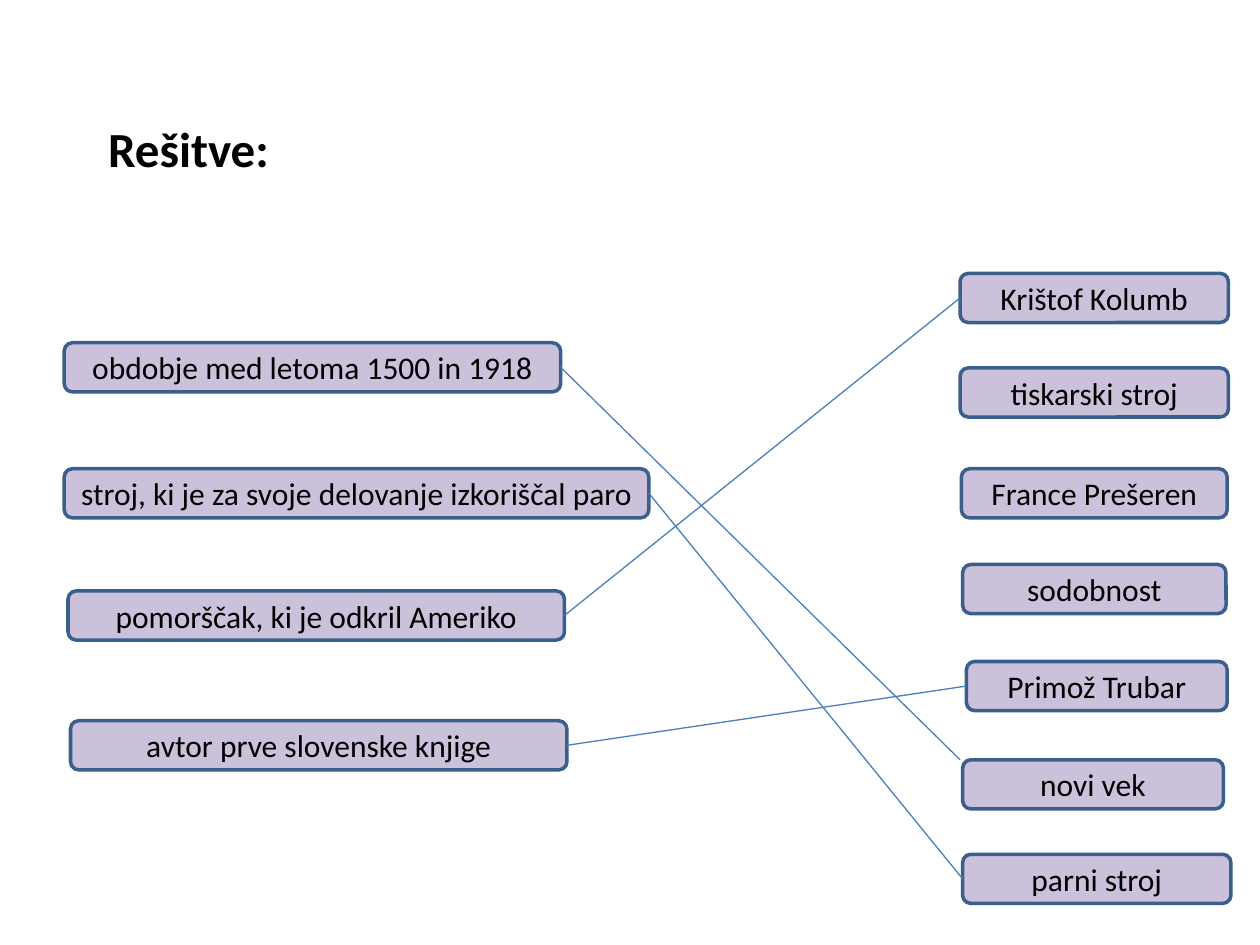
from dataclasses import dataclass
from typing import Optional

from lxml import etree
from pptx import Presentation
from pptx.dml.color import RGBColor
from pptx.enum.shapes import MSO_CONNECTOR, MSO_SHAPE
from pptx.enum.text import MSO_ANCHOR, MSO_AUTO_SIZE, PP_ALIGN
from pptx.oxml.ns import qn
from pptx.util import Inches, Pt

ROUNDED = MSO_SHAPE.ROUNDED_RECTANGLE
STRAIGHT = MSO_CONNECTOR.STRAIGHT
MIDDLE = MSO_ANCHOR.MIDDLE
CENTER = PP_ALIGN.CENTER
FIT_SHAPE = MSO_AUTO_SIZE.SHAPE_TO_FIT_TEXT

LILAC = RGBColor(0xCC, 0xC1, 0xDA)
BORDER_BLUE = RGBColor(0x3A, 0x5F, 0x8C)
LINK_BLUE = RGBColor(0x4B, 0x7E, 0xBC)
BLACK = RGBColor(0, 0, 0)

SLIDE_WIDTH, SLIDE_HEIGHT = Inches(10), Inches(7.5)
COLUMN, ROW = SLIDE_WIDTH / 100, SLIDE_HEIGHT / 100
CARD_ROWS = 5.2
LEFT_SIDE, RIGHT_SIDE = 1, 3

CARD_FONT = {"name": "Calibri", "size": Pt(18)}
TITLE_FONT = {"name": "Calibri", "size": Pt(28), "bold": True}


@dataclass(frozen=True)
class Card:
    """A label placed on a grid of 100 columns by 100 rows."""
    text: str
    left: float
    top: float
    width: float


@dataclass(frozen=True)
class Match:
    """A clue and its answer; loose_end is a grid point not joined to the card."""
    clue: str
    answer: str
    loose_end: Optional[tuple[float, float]] = None


CLUES = [
    Card("obdobje med letoma 1500 in 1918", 5.1, 36.27, 39.4),
    Card("stroj, ki je za svoje delovanje izkoriščal paro", 5.1, 49.6, 46.4),
    Card("pomorščak, ki je odkril Ameriko", 5.4, 62.53, 39.4),
    Card("avtor prve slovenske knjige", 5.6, 76.27, 39.4),
]
ANSWERS = [
    Card("Krištof Kolumb", 76.2, 28.93, 21.3),
    Card("tiskarski stroj", 76.2, 38.93, 21.3),
    Card("France Prešeren", 76.3, 49.6, 21.1),
    Card("sodobnost", 76.4, 59.73, 20.9),
    Card("Primož Trubar", 76.7, 70, 20.7),
    Card("novi vek", 76.4, 80.4, 20.7),
    Card("parni stroj", 76.4, 90.4, 21.3),
]
MATCHES = [
    Match(CLUES[0].text, "novi vek", (76.2, 80.4)),
    Match(CLUES[1].text, "parni stroj"),
    Match(CLUES[2].text, "Krištof Kolumb"),
    Match(CLUES[3].text, "Primož Trubar"),
]


def across(columns: float) -> int:
    return round(columns * COLUMN)


def down(rows: float) -> int:
    return round(rows * ROW)


def write_text(shape, text: str, font_format: dict) -> None:
    paragraph = shape.text_frame.paragraphs[0]
    paragraph.text = text
    for name, value in font_format.items():
        setattr(paragraph.font, name, value)
    paragraph.font.color.rgb = BLACK


def draw_card(slide, card: Card):
    shape = slide.shapes.add_shape(
        ROUNDED, across(card.left), down(card.top), across(card.width), down(CARD_ROWS))
    shape.shadow.inherit = False
    shape.fill.solid()
    shape.fill.fore_color.rgb = LILAC
    shape.line.color.rgb = BORDER_BLUE
    shape.line.width = Pt(2)
    frame_format = {"word_wrap": True, "vertical_anchor": MIDDLE,
                    "margin_left": Inches(0.05), "margin_right": Inches(0.05)}
    for name, value in frame_format.items():
        setattr(shape.text_frame, name, value)
    write_text(shape, card.text, CARD_FONT)
    shape.text_frame.paragraphs[0].alignment = CENTER
    return shape


def draw_match(slide, match: Match, cards: dict) -> None:
    end_x, end_y = match.loose_end or (0, 0)
    connector = slide.shapes.add_connector(STRAIGHT, 0, 0, across(end_x), down(end_y))
    connector.begin_connect(cards[match.clue], RIGHT_SIDE)
    if match.loose_end is None:
        connector.end_connect(cards[match.answer], LEFT_SIDE)
    connector.line.color.rgb = LINK_BLUE
    connector.line.width = Pt(0.75)
    etree.SubElement(connector._element.spPr, qn("a:effectLst"))


def draw_title(slide, text: str) -> None:
    title = slide.shapes.add_textbox(across(7.6), down(11.87), across(34.4), down(7.6))
    title.text_frame.word_wrap = True
    title.text_frame.auto_size = FIT_SHAPE
    write_text(title, text, TITLE_FONT)


def main() -> None:
    presentation = Presentation()
    presentation.slide_width, presentation.slide_height = SLIDE_WIDTH, SLIDE_HEIGHT
    slide = presentation.slides.add_slide(presentation.slide_layouts[6])
    cards = {card.text: draw_card(slide, card) for card in CLUES + ANSWERS}
    for match in MATCHES:
        draw_match(slide, match, cards)
    draw_title(slide, "Rešitve:")
    presentation.save("out.pptx")


if __name__ == "__main__":
    main()
